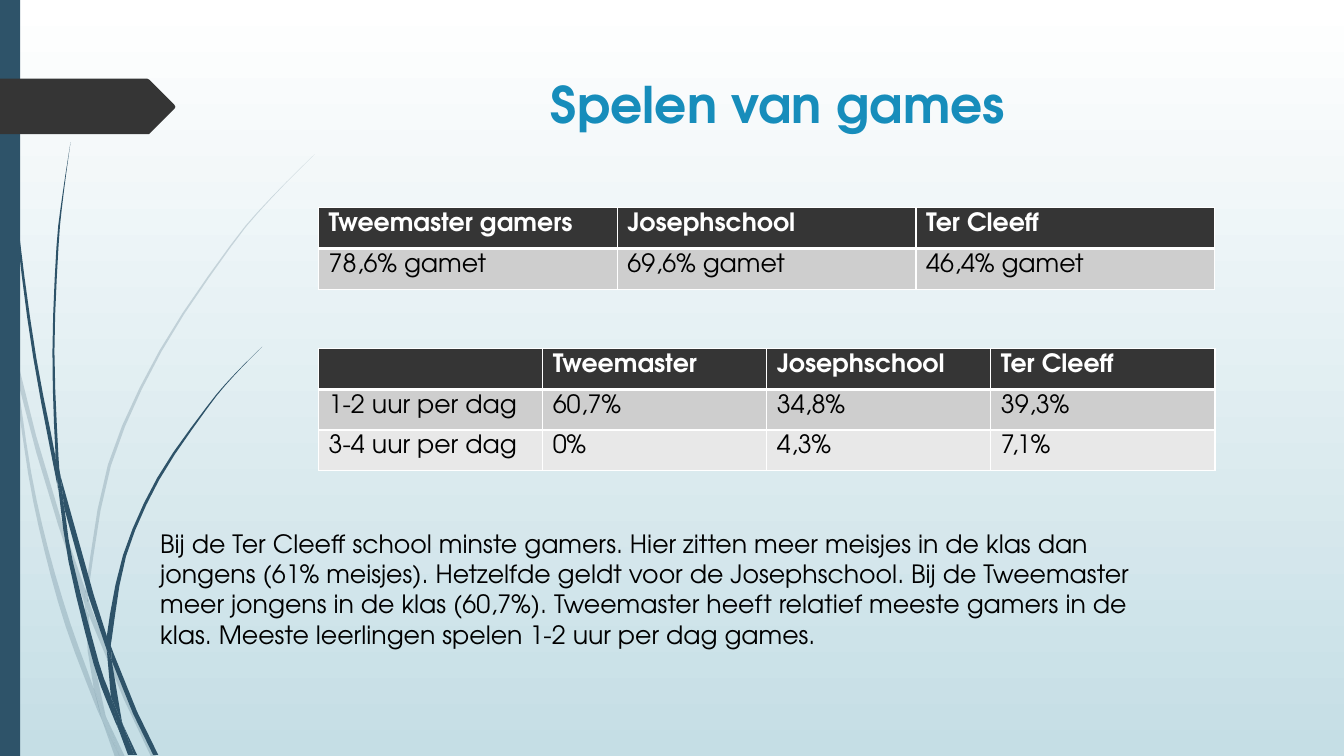
from lxml import etree
from pptx import Presentation
from pptx.dml.color import RGBColor
from pptx.enum.shapes import MSO_SHAPE
from pptx.enum.text import MSO_ANCHOR, PP_ALIGN
from pptx.oxml.ns import qn
from pptx.util import Inches, Pt

RECTANGLE = MSO_SHAPE.RECTANGLE
TOP = MSO_ANCHOR.TOP
LEFT, CENTER = PP_ALIGN.LEFT, PP_ALIGN.CENTER

FONT = "TeX Gyre Adventor"
WIDTH, HEIGHT = 13.33, 7.5
NAVY, CHARCOAL, BLUE = "2E5369", "353535", "178DBB"
WHITE, BLACK = "FFFFFF", "000000"
BAND_FILLS = ["CECECE", "E8E8E8"]

PALE_BLADES = [
    ([(0, 2.82), (0.09, 3.22), (0.11, 3.5)], [(0, 2.99), (0.1, 3.44), (0.11, 3.5)]),
    ([(0.14, 3.45), (0.36, 4.33), (0.62, 5.2), (0.85, 5.86)],
     [(0.17, 3.76), (0.36, 4.49), (0.58, 5.22), (0.84, 5.99)]),
    ([(0.88, 5.96), (0.92, 6.07), (1.27, 6.92), (1.55, 7.51)],
     [(0.88, 6.1), (1.23, 6.94), (1.5, 7.51)]),
    ([(1.05, 7.11), (1.24, 7.51)], [(1.05, 7.11), (1.19, 7.51)]),
    ([(0.11, 3.5), (0.17, 3.76), (0.31, 4.69), (0.48, 5.45), (0.7, 6.19), (0.93, 6.83), (1.01, 7.14)],
     [(0.11, 3.5), (0.28, 4.7), (0.44, 5.46), (0.65, 6.21), (0.92, 6.93), (1.01, 7.14)]),
    ([(0.84, 5.99), (0.88, 6.1), (0.91, 6.46), (1.05, 7.11)],
     [(0.84, 5.99), (0.87, 6.46), (0.93, 6.83), (1.05, 7.11)]),
    ([(3.12, 1.53), (2.68, 1.98), (2.29, 2.45), (1.6, 3.49), (1.1, 4.62), (0.88, 5.84), (0.88, 5.96)],
     [(3.12, 1.53), (2.68, 1.97), (2.28, 2.44), (1.58, 3.48), (1.07, 4.61), (0.85, 5.84), (0.85, 5.86)]),
    ([(1.01, 7.14), (1.19, 7.51)], [(1.01, 7.14), (1.14, 7.51)]),
    ([(0.85, 5.86), (0.88, 5.96), (0.88, 6.1)], [(0.84, 5.99), (0.88, 6.08)]),
    ([(0.93, 6.83), (1.05, 7.11), (1.19, 7.51)], [(0.93, 6.83), (1.01, 7.14), (1.19, 7.51)]),
]
DARK_BLADES = [
    ([(0.04, 0), (0.05, 0.48), (0.08, 1.09), (0.19, 2.32), (0.36, 3.55), (0.55, 4.53), (0.57, 4.81)],
     [(0.03, 0), (0.04, 0.48), (0.07, 1.1), (0.17, 2.33), (0.33, 3.55), (0.56, 4.77), (0.57, 4.81)]),
    ([(0.6, 4.72), (0.93, 5.9), (1.06, 6.31)],
     [(0.6, 4.72), (0.64, 5.05), (0.88, 5.92), (1.06, 6.45)]),
    ([(1.1, 6.41), (1.13, 6.49), (1.36, 7.06), (1.57, 7.49)],
     [(1.1, 6.41), (1.11, 6.56), (1.32, 7.08), (1.52, 7.49)]),
    ([(0.57, 4.77), (0.64, 5.05), (0.72, 5.56), (0.98, 6.57), (1.1, 6.91), (1.17, 7.22)],
     [(0.57, 4.77), (0.68, 5.57), (0.93, 6.59), (1.11, 7.08), (1.17, 7.22)]),
    ([(0.7, 1.41), (0.63, 1.93), (0.58, 2.45), (0.54, 3.49), (0.58, 4.53), (0.6, 4.72)],
     [(0.7, 1.41), (0.62, 1.93), (0.56, 2.45), (0.52, 3.49), (0.55, 4.49), (0.6, 4.72)]),
    ([(1.22, 7.19), (1.36, 7.49)], [(1.22, 7.19), (1.33, 7.49)]),
    ([(0.55, 4.49), (0.6, 4.72), (0.64, 5.05)], [(0.55, 4.53), (0.57, 4.77), (0.64, 5.05)]),
    ([(2.6, 3.44), (2.31, 3.74), (2.05, 4.06), (1.58, 4.76), (1.25, 5.52), (1.11, 6.33), (1.1, 6.41)],
     [(2.6, 3.44), (2.31, 3.73), (2.04, 4.05), (1.56, 4.74), (1.22, 5.51), (1.06, 6.31), (1.1, 6.41)]),
    ([(1.17, 7.22), (1.31, 7.49)], [(1.17, 7.22), (1.27, 7.49)]),
    ([(1.06, 6.45), (1.11, 6.56), (1.21, 7.16), (1.22, 7.19)],
     [(1.06, 6.45), (1.1, 6.91), (1.22, 7.19)]),
    ([(1.06, 6.31), (1.1, 6.41), (1.11, 6.56)], [(1.06, 6.45), (1.11, 6.56)]),
    ([(1.1, 6.91), (1.22, 7.19), (1.33, 7.49)], [(1.1, 6.91), (1.17, 7.22), (1.3, 7.49)]),
]
TAG_OUTLINE = [(0, 0), (1.46, 0), (1.48, 0.01), (1.73, 0.26), (1.74, 0.28),
               (1.73, 0.3), (1.48, 0.55), (1.36, 0.55), (0, 0.55)]

GAMERS = [["Tweemaster gamers", "Josephschool", "Ter Cleeff"],
          ["78,6% gamet", "69,6% gamet", "46,4% gamet"]]
HOURS = [["", "Tweemaster", "Josephschool", "Ter Cleeff"],
         ["1-2 uur per dag", "60,7%", "34,8%", "39,3%"],
         ["3-4 uur per dag", "0%", "4,3%", "7,1%"]]
CONCLUSION = (
    "Bij de Ter Cleeff school minste gamers. Hier zitten meer meisjes in de klas "
    "dan jongens (61% meisjes). Hetzelfde geldt voor de Josephschool. Bij de "
    "Tweemaster meer jongens in de klas (60,7%). Tweemaster heeft relatief meeste "
    "gamers in de klas. Meeste leerlingen spelen 1-2 uur per dag games.")


def color(hex_code):
    """Turn a hex string into a colour."""
    return RGBColor.from_string(hex_code)


def paint(shape, fill, opacity=100):
    """Give a shape a plain fill without line or shadow."""
    shape.shadow.inherit = False
    shape.line.fill.background()
    shape.fill.solid()
    shape.fill.fore_color.rgb = color(fill)
    if opacity < 100:
        tint = shape._element.spPr.find(qn("a:solidFill"))[0]
        etree.SubElement(tint, qn("a:alpha"), val=str(opacity * 1000))


def smooth_edge(knots):
    """Return points on a smooth curve through the knots, three to a long span."""
    steps = 3 if len(knots) > 4 else 1
    padded = [knots[0], *knots, knots[-1]]
    points = []
    for a, b, c, d in zip(padded, padded[1:], padded[2:], padded[3:]):
        for t in (step / steps for step in range(steps)):
            points.append(tuple(
                q + t / 2 * (r - p + t * (2 * p - 5 * q + 4 * r - s + t * (3 * (q - r) + s - p)))
                for p, q, r, s in zip(a, b, c, d)))
    return points + [knots[-1]]


def add_outline(slide, left, top, points, fill, opacity=100):
    """Draw a closed outline whose points start from the given corner."""
    places = [(Inches(left + x), Inches(top + y)) for x, y in points]
    builder = slide.shapes.build_freeform(*places[0])
    builder.add_line_segments(places[1:], close=True)
    paint(builder.convert_to_shape(), fill, opacity)


def add_grass(slide, left, top):
    """Draw the pale blades and then the dark blades."""
    for blades, opacity in ((PALE_BLADES, 20), (DARK_BLADES, 100)):
        for right_edge, left_edge in blades:
            outline = smooth_edge(right_edge) + smooth_edge(left_edge)[::-1]
            add_outline(slide, left, top, outline, NAVY, opacity)


def add_side_bar(slide, *box):
    """Draw the bar along the slide edge."""
    paint(slide.shapes.add_shape(RECTANGLE, *map(Inches, box)), NAVY)


def write(frame, text, size, hex_code, bold=False, align=LEFT):
    """Write one run into the first paragraph of a text frame."""
    paragraph = frame.paragraphs[0]
    paragraph.alignment = align
    run = paragraph.add_run()
    run.text = text
    run.font.name = FONT
    run.font.size = Pt(size)
    run.font.bold = bold
    run.font.color.rgb = color(hex_code)


def add_text(slide, box, text, size, hex_code, bold=False, align=LEFT):
    """Place wrapped text in a box."""
    frame = slide.shapes.add_textbox(*map(Inches, box)).text_frame
    frame.word_wrap = True
    frame.vertical_anchor = TOP
    write(frame, text, size, hex_code, bold, align)


def add_borders(cell, bottom_width):
    """Give a cell white borders with its own bottom width."""
    properties = cell._tc.get_or_add_tcPr()
    for side, points in (("L", 1), ("R", 1), ("T", 1), ("B", bottom_width)):
        line = etree.SubElement(properties, qn("a:ln" + side), w=str(Pt(points)))
        fill = etree.SubElement(line, qn("a:solidFill"))
        etree.SubElement(fill, qn("a:srgbClr"), val=WHITE)


def add_school_table(slide, left, top, width, height, rows):
    """Place a table with a dark header row and grey bands."""
    columns = len(rows[0])
    box = map(Inches, (left, top, width, height))
    table = slide.shapes.add_table(len(rows), columns, *box).table
    for r, values in enumerate(rows):
        header = r == 0
        for c, value in enumerate(values):
            cell = table.cell(r, c)
            add_borders(cell, 3 if header else 1)
            cell.fill.solid()
            cell.fill.fore_color.rgb = color(CHARCOAL if header else BAND_FILLS[(r - 1) % 2])
            if value:
                write(cell.text_frame, value, 18, WHITE if header else BLACK, header)


def set_background(slide):
    """Fill the slide from white at the top to pale blue."""
    fill = slide.background.fill
    fill.gradient()
    fill.gradient_angle = 270
    for stop, hex_code in zip(fill.gradient_stops, (WHITE, "C5DEE5")):
        stop.color.rgb = color(hex_code)


def main():
    """Build the slide and save it."""
    deck = Presentation()
    deck.slide_width, deck.slide_height = Inches(WIDTH), Inches(HEIGHT)
    slide = deck.slides.add_slide(deck.slide_layouts[6])
    set_background(slide)
    add_grass(slide, 0, 0)
    add_side_bar(slide, 0, 0, 0.2, HEIGHT)
    add_outline(slide, 0, 0.78, TAG_OUTLINE, CHARCOAL)
    add_text(slide, (2.84, 0.68, 9.75, 1.4), "Spelen van games", 36, BLUE, True, CENTER)
    add_text(slide, (1.49, 5.19, 9.92, 1.31), CONCLUSION, 18, BLACK)
    add_school_table(slide, 3.16, 2.06, 8.89, 0.81, GAMERS)
    add_school_table(slide, 3.16, 3.46, 8.89, 1.21, HOURS)
    deck.save("out.pptx")


if __name__ == "__main__":
    main()
